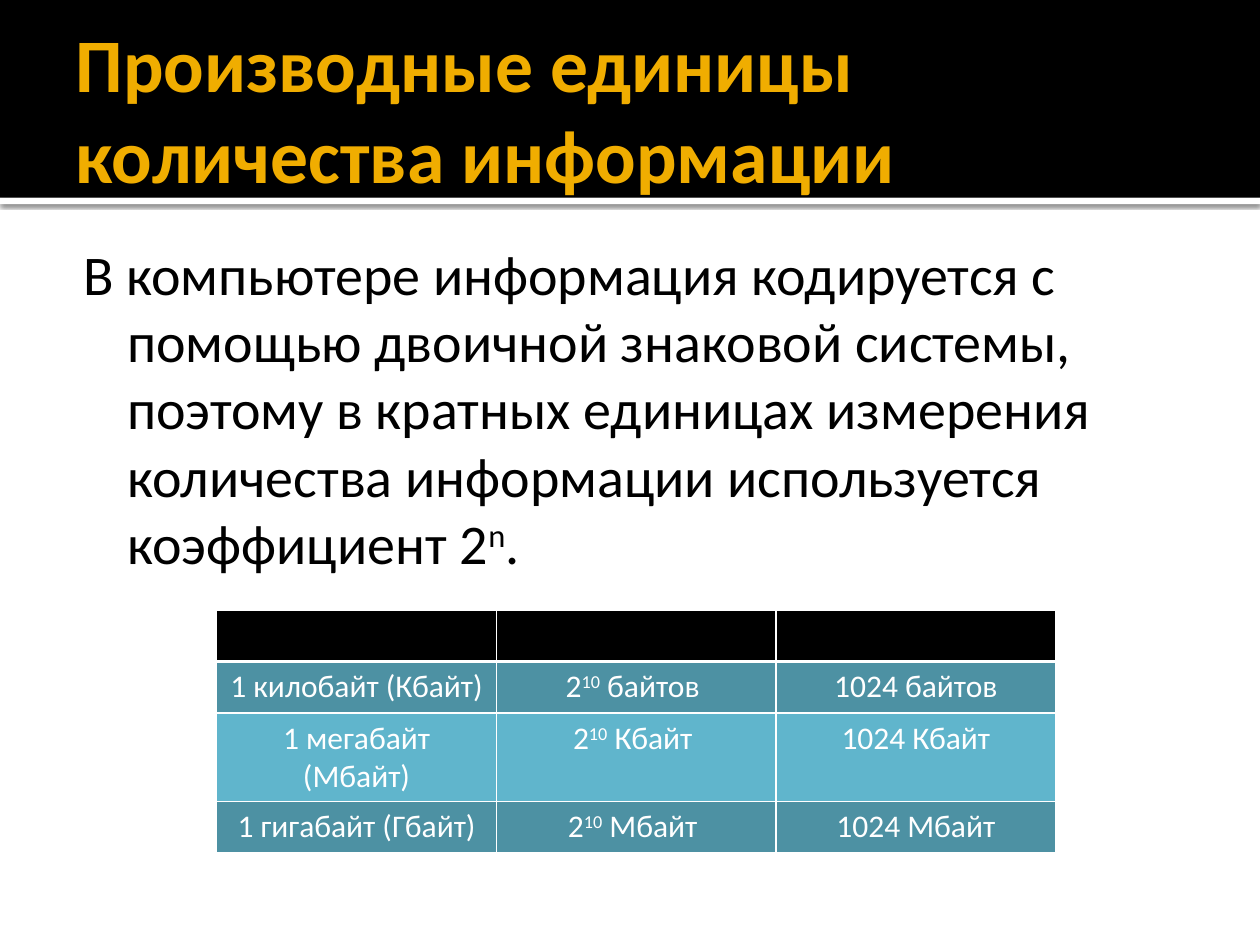
from lxml.etree import SubElement
from pptx import Presentation
from pptx.dml.color import RGBColor
from pptx.enum.shapes import MSO_SHAPE
from pptx.enum.text import MSO_ANCHOR, MSO_AUTO_SIZE, PP_ALIGN
from pptx.oxml import parse_xml
from pptx.oxml.ns import nsdecls, qn
from pptx.util import Inches, Pt

FONT = "Calibri"
BLACK, WHITE, GOLD = "000000", "FFFFFF", "F0AD00"
DARK_TEAL, LIGHT_TEAL = "4D91A3", "60B5CC"
TITLE = "Производные единицы количества информации"
BODY = [
    ("В компьютере информация кодируется с помощью двоичной знаковой системы, "
     "поэтому в кратных единицах измерения количества информации используется "
     "коэффициент 2", False),
    ("n", True),
    (".", False),
]
UNITS = [
    ("1 килобайт (Кбайт)", "байтов"),
    ("1 мегабайт (Мбайт)", "Кбайт"),
    ("1 гигабайт (Гбайт)", "Мбайт"),
]


def color(value):
    """Turn a hex string into a colour."""
    return RGBColor.from_string(value)


def style(font, size, value, bold=False):
    """Set the face, size, colour and weight of a font."""
    font.name = FONT
    font.size = Pt(size)
    font.bold = bold
    font.color.rgb = color(value)


def set_margins(frame, left, top, right, bottom):
    """Set the four insets of a text frame in inches."""
    frame.margin_left, frame.margin_top = Inches(left), Inches(top)
    frame.margin_right, frame.margin_bottom = Inches(right), Inches(bottom)


def write_spans(para, spans, size, value):
    """Add runs to a paragraph, raising those marked as superscript."""
    for text, raised in spans:
        span = para.add_run()
        span.text = text
        style(span.font, size, value)
        if raised:
            span.font.element.set("baseline", "30000") if hasattr(
                span.font, "element") else span._r.get_or_add_rPr().set("baseline", "30000")


def add_band(page, top, height, value):
    """Add a full-width band behind the title."""
    band = page.shapes.add_shape(
        MSO_SHAPE.RECTANGLE, 0, Inches(top), Inches(10), Inches(height))
    band.shadow.inherit = False
    band.fill.solid()
    band.fill.fore_color.rgb = color(value)
    band.line.fill.background()
    page.shapes.title.element.addprevious(band.element)
    return band


def add_shadow(shape):
    """Give a shape a soft shadow below it."""
    effects = shape.element.spPr.find(qn("a:effectLst"))
    effects.append(parse_xml(
        f'<a:outerShdw {nsdecls("a")} blurRad="{Pt(2.5)}" dist="{Pt(0.8)}" '
        f'dir="5400000" algn="tl" rotWithShape="0"><a:srgbClr val="{BLACK}">'
        '<a:alpha val="60000"/></a:srgbClr></a:outerShdw>'))


def format_title(title):
    """Place and fill the title placeholder."""
    title.left, title.top = Inches(0.5), Inches(0.17)
    title.width, title.height = Inches(9), Inches(1.37)
    frame = title.text_frame
    frame.text = TITLE
    frame.auto_size = MSO_AUTO_SIZE.NONE
    frame.vertical_anchor = MSO_ANCHOR.MIDDLE
    set_margins(frame, 0.1, 0.05, 0.05, 0.05)
    para = frame.paragraphs[0]
    para.alignment = PP_ALIGN.LEFT
    style(para.runs[0].font, 43.2, GOLD, bold=True)


def add_body(page):
    """Add the explanation with a hanging indent."""
    box = page.shapes.add_textbox(Inches(0.47), Inches(1.8), Inches(9), Inches(2.82))
    frame = box.text_frame
    frame.word_wrap = True
    set_margins(frame, 0.06, 0.1, 0.1, 0.05)
    para = frame.paragraphs[0]
    write_spans(para, BODY, 32, BLACK)
    properties = para._p.get_or_add_pPr()
    properties.set("marL", str(Inches(0.48)))
    properties.set("indent", str(Inches(-0.35)))


def fill_cell(cell, value, spans=()):
    """Fill a table cell and write its centred text."""
    cell.fill.solid()
    cell.fill.fore_color.rgb = color(value)
    para = cell.text_frame.paragraphs[0]
    para.alignment = PP_ALIGN.CENTER
    style(para.font, 18, WHITE)
    write_spans(para, spans, 18, WHITE)


def underline_cell(cell):
    """Draw a white border along the bottom of a cell."""
    properties = cell._tc.get_or_add_tcPr()
    border = parse_xml(f'<a:lnB {nsdecls("a")} w="{Pt(2)}"/>')
    fill = SubElement(border, qn("a:solidFill"))
    SubElement(fill, qn("a:srgbClr")).set("val", WHITE)
    properties.insert(0, border)


def add_units_table(page):
    """Add the table of units under an empty header row."""
    table = page.shapes.add_table(
        len(UNITS) + 1, 3, Inches(1.72), Inches(4.84),
        Inches(6.66), Inches(1.64)).table
    table.horz_banding = False
    for cell in table.rows[0].cells:
        fill_cell(cell, BLACK)
        underline_cell(cell)
    for index, (name, base) in enumerate(UNITS, start=1):
        contents = [
            [(name, False)],
            [("2", False), ("10", True), (f" {base} ", False)],
            [(f"1024 {base}", False)],
        ]
        shade = DARK_TEAL if index % 2 else LIGHT_TEAL
        for cell, spans in zip(table.rows[index].cells, contents):
            fill_cell(cell, shade, spans)
    for row in table.rows:
        row.height = Inches(0.41)


def main():
    """Build the slide and save it."""
    deck = Presentation()
    deck.slide_width, deck.slide_height = Inches(10), Inches(7.5)
    page = deck.slides.add_slide(deck.slide_layouts[5])
    add_shadow(add_band(page, 1.57, 0.05, WHITE))
    add_band(page, 0, 1.57, BLACK)
    format_title(page.shapes.title)
    add_body(page)
    add_units_table(page)
    deck.save("out.pptx")


if __name__ == "__main__":
    main()
